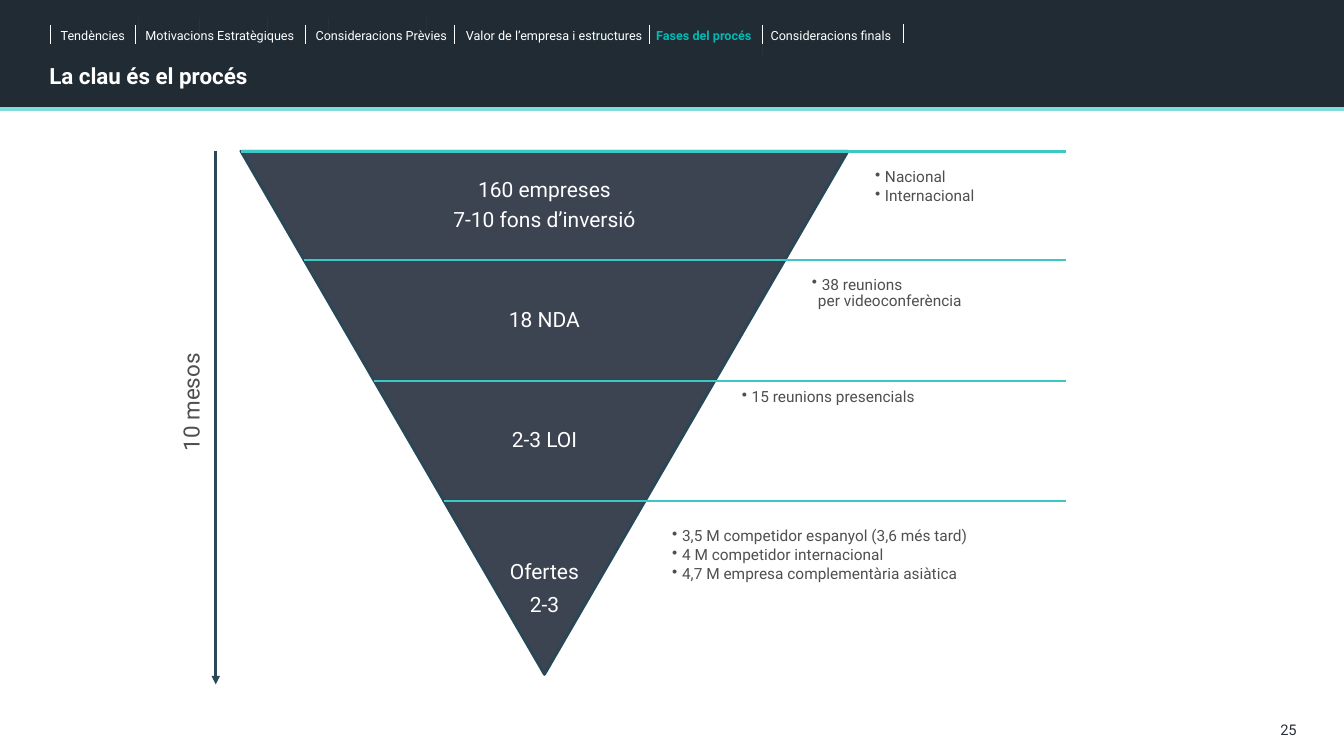
from lxml import etree
from pptx import Presentation, util as u
from pptx.dml.color import RGBColor
from pptx.enum import shapes as es, text as et
from pptx.oxml.ns import qn

# Content
TITLE, PAGE, SPAN = "La clau és el procés", "25", "10 mesos"
TABS = [  # label, left, width
    ("Tendències", 0.55, 0.74),
    ("Motivacions Estratègiques", 1.38, 1.6),
    ("Consideracions Prèvies", 3.09, 1.38),
    ("Valor de l’empresa i estructures", 4.58, 1.83),
    ("Fases del procés", 6.37, 1.22),
    ("Consideracions finals", 7.63, 1.22),
]
ACTIVE = 4
BARS = [0.5, 1.34, 3.03, 4.51, 6.44, 7.56, 8.96]
DIM = [1.37, 1.98, 2.65, 3.26, 4.23]
STAGES = [  # height, label lines, notes
    (1.08, ["160 empreses", "7-10 fons d’inversió"],
     ["Nacional", "Internacional"]),
    (1.2, ["18 NDA"], ["38 reunions\vper videoconferència"]),
    (1.19, ["2-3 LOI"], ["15 reunions presencials"]),
    (1.72, ["Ofertes", "2-3"],
     ["3,5 M competidor espanyol (3,6 més tard)",
      "4 M competidor internacional",
      "4,7 M empresa complementària asiàtica"]),
]
HEX = dict(head="202B34", rule="80DCD9", dim="2B303A", white="FFFFFF",
           teal="00BAB3", fill="3C4351", edge="2A4757", note="514F4E",
           line="3CC9C5")
FONT = "Roboto"

# Grid, in inches
WIDE, HIGH = 13.33, 7.5
HEAD = 1.08
MID, TOP, HALF = 5.4, 1.5, 3.01
SLOPE = 0.58
END = 10.57
EDGE = 11.26

prs = Presentation()
prs.slide_width, prs.slide_height = u.Inches(WIDE), u.Inches(HIGH)
slide = prs.slides.add_slide(prs.slide_layouts[6])
parts = slide.shapes


def tint(name):
    return RGBColor.from_string(HEX[name])


def shape(kind, x, y, w, h, fill, edge=None):
    box = parts.add_shape(kind, *map(u.Inches, (x, y, w, h)))
    box.shadow.inherit = False
    box.fill.solid()
    box.fill.fore_color.rgb = tint(fill)
    if edge:
        box.line.color.rgb = tint(edge)
        box.line.width = u.Pt(2)
    else:
        box.line.fill.background()
    return box


def line(x1, y1, x2, y2, color, width, arrow=False):
    rule = parts.add_connector(es.MSO_CONNECTOR.STRAIGHT,
                               *map(u.Inches, (x1, y1, x2, y2)))
    rule.line.color.rgb = tint(color)
    rule.line.width = u.Pt(width)
    if arrow:
        etree.SubElement(rule.line._get_or_add_ln(), qn("a:tailEnd"),
                         type="triangle")
    etree.SubElement(rule._element.spPr, qn("a:effectLst"))


def write(rows, x, y, w, h, size, color, pad=(0, 0), bold=False, mid=True,
          gap=0, lead=None, wrap=True, dots=False):
    box = parts.add_textbox(*map(u.Inches, (x, y, w, h)))
    frame = box.text_frame
    frame.word_wrap = wrap
    frame.margin_left = frame.margin_right = u.Inches(pad[0])
    frame.margin_top = frame.margin_bottom = u.Inches(pad[1])
    anchor = et.MSO_ANCHOR
    frame.vertical_anchor = anchor.MIDDLE if mid else anchor.TOP
    for i, row in enumerate(rows):
        para = frame.add_paragraph() if i else frame.paragraphs[0]
        para.text = " " + row if dots else row
        para.alignment = et.PP_ALIGN.CENTER if mid else et.PP_ALIGN.LEFT
        para.space_after = u.Pt(gap)
        if lead:
            para.line_spacing = lead
        if dots:
            props = para._p.get_or_add_pPr()
            props.set("marL", str(u.Inches(0.06)))
            props.set("indent", str(u.Inches(-0.06)))
            etree.SubElement(props, qn("a:buChar"), char="•")
        font = para.font
        font.name, font.size, font.bold = FONT, u.Pt(size), bold
        font.color.rgb = tint(color)
    return box


# Header band and page number
shape(es.MSO_SHAPE.RECTANGLE, 0, 0, WIDE, HEAD, "head")
line(0, HEAD, WIDE, HEAD, "rule", 3)
write([PAGE], 12.28, 7, 1, 0.47, 10.5, "dim", (0.04, 0.02))

# Navigation
line(7.56, 0.39, 7.56, 0.58, "dim", 0.5)
for x in DIM:
    line(x, 0.18, x, 0.37, "dim", 0.5)
for i, (label, x, w) in enumerate(TABS):
    on = i == ACTIVE
    write([label], x, 0.28, w, 0.15, 9, "teal" if on else "white",
          bold=on, wrap=False)
for x in BARS:
    y = 0.24 if x == BARS[-1] else 0.25
    line(x, y, x, y + 0.19, "white", 0.5)
write([TITLE], 0.39, 0.6, 8.15, 0.45, 16, "white", (0.1, 0.05),
      bold=True, mid=False, lead=0.9)

# Funnel: each stage narrows by the same slope
rules = []
y = TOP
for i, (h, label, notes) in enumerate(STAGES):
    half = HALF - SLOPE * (y - TOP)
    left, right = MID - half, MID + half
    write(notes, right, y, EDGE - right, h, 11, "note", (0.27, 0.27),
          mid=False, gap=1.65, lead=0.9, dots=True)
    cone = shape(es.MSO_SHAPE.TRAPEZOID, left, y, 2 * half, h, "fill", "edge")
    cone.adjustments[0] = SLOPE
    cone.rotation = 180
    last = i == len(STAGES) - 1
    write(label, left, y, 2 * half, h, 15, "white", (0.02, 0.02),
          gap=5.25, lead=None if last else 0.9)
    rules.append((left, y))
    y += h

# Time arrow
line(2.14, TOP, 2.14, 6.79, "edge", 2, arrow=True)
span = write([SPAN], 1.15, 3.8, 1.48, 0.38, 16, "note", (0.06, 0.06))
span.rotation = 270

# Stage rules
for x, y in rules:
    line(x, y, END, y, "line", 2)

prs.save("out.pptx")
